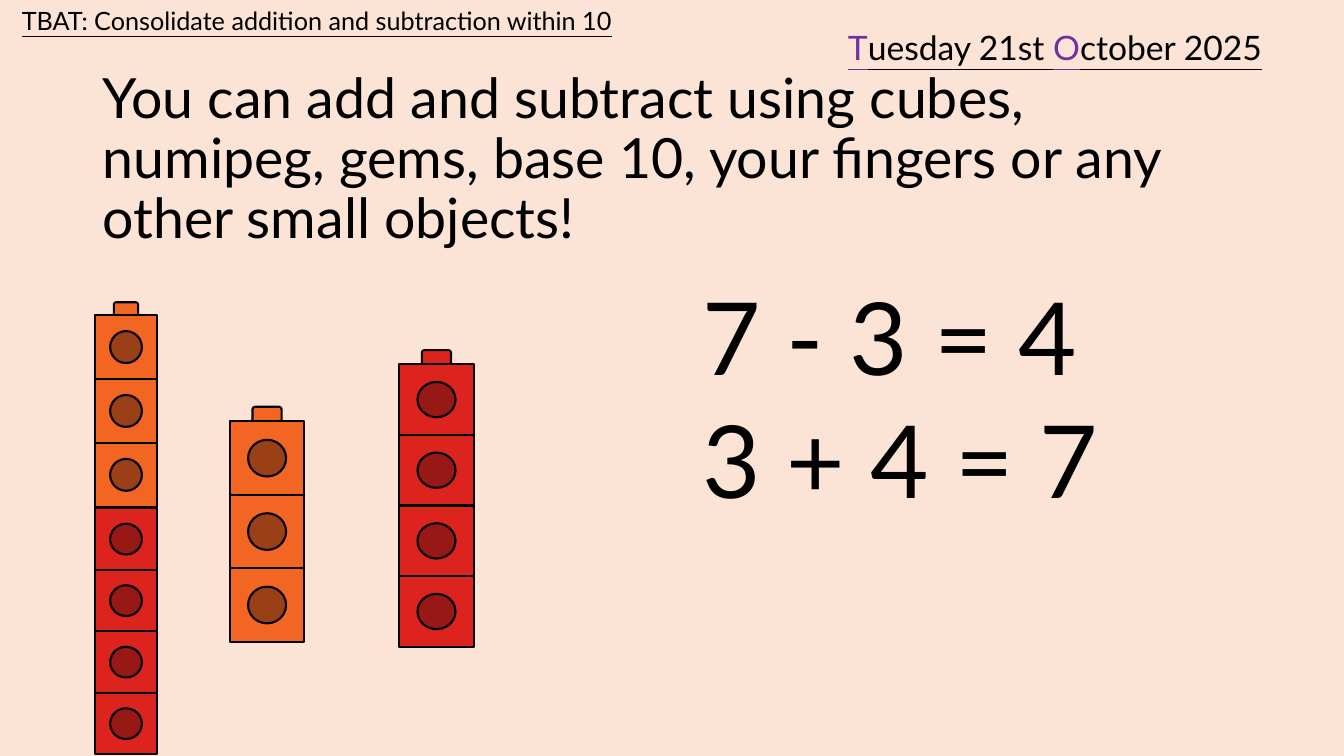
from dataclasses import dataclass

from pptx import Presentation
from pptx.dml.color import RGBColor
from pptx.enum.shapes import MSO_SHAPE
from pptx.enum.text import MSO_ANCHOR
from pptx.slide import Slide
from pptx.util import Cm, Pt

STUD = MSO_SHAPE.ROUND_2_SAME_RECTANGLE
BODY = MSO_SHAPE.RECTANGLE
HOLE = MSO_SHAPE.OVAL
TOP = MSO_ANCHOR.TOP
MIDDLE = MSO_ANCHOR.MIDDLE

FONT = "Lato"
COLOURS = {
    "background": "FBE3D6",
    "black": "000000",
    "purple": "7030A0",
    "red": "DC231E",
    "dark red": "971815",
    "orange": "F36523",
    "dark orange": "994016",
}


@dataclass
class Tower:
    """A stack of cubes; lengths in cm, top is the top of the highest cube body."""
    left: float
    top: float
    cube_width: float
    cube_height: float
    count: int
    colour: str


@dataclass
class TextBlock:
    """A text box in cm; each paragraph is a list of (text, colour) runs."""
    left: float
    top: float
    width: float
    height: float
    size: float
    paragraphs: list[list[tuple[str, str]]]
    underline: bool = False
    line_spacing: float = 1.0
    space_before: float = 0
    anchor: MSO_ANCHOR = TOP


TOWERS = [
    Tower(10.06, 9.18, 1.88, 1.78, 4, "red"),
    Tower(5.79, 10.62, 1.88, 1.85, 3, "orange"),
    Tower(2.39, 12.81, 1.57, 1.55, 4, "red"),
    Tower(2.39, 7.94, 1.57, 1.61, 3, "orange"),
]

TEXT_BLOCKS = [
    TextBlock(2.34, 2.21, 29.21, 3.68, 39.6,
              [[("You can add and subtract using cubes, numipeg, gems, base 10, "
                 "your fingers or any other small objects!", "black")]],
              line_spacing=0.9, anchor=MIDDLE),
    TextBlock(17.45, 7.14, 14.02, 6.53, 72,
              [[("7 - 3 = 4", "black")], [("3 + 4 = 7", "black")]],
              line_spacing=0.9, space_before=10),
    TextBlock(0.3, 0, 16.94, 1.02, 18,
              [[("TBAT: Consolidate addition and subtraction within 10", "black")]],
              underline=True),
    TextBlock(21.12, 0.56, 11.91, 1.27, 24,
              [[("T", "purple"), ("uesday 21st ", "black"),
                ("O", "purple"), ("ctober 2025", "black")]],
              underline=True),
]


def colour(name: str) -> RGBColor:
    return RGBColor.from_string(COLOURS[name])


def draw_tower(slide: Slide, tower: Tower) -> None:
    """Stack the cubes from the bottom up, so each body hides the stud below it."""
    group = slide.shapes.add_group_shape()
    width, height = tower.cube_width, tower.cube_height
    # Preset, width, height and top offset as shares of the cube, then fill.
    parts = [
        (STUD, 0.39, 0.22, -0.2, tower.colour),
        (BODY, 1, 1, 0, tower.colour),
        (HOLE, 0.51, 0.5, 0.25, f"dark {tower.colour}"),
    ]
    for row in reversed(range(tower.count)):
        cube_top = tower.top + row * height
        for preset, width_share, height_share, offset, fill in parts:
            shape = group.shapes.add_shape(
                preset,
                Cm(tower.left + width * (1 - width_share) / 2),
                Cm(cube_top + height * offset),
                Cm(width * width_share),
                Cm(height * height_share),
            )
            shape.shadow.inherit = False
            shape.fill.solid()
            shape.fill.fore_color.rgb = colour(fill)
            shape.line.color.rgb = colour("black")
            shape.line.width = Pt(1.5)


def draw_text(slide: Slide, block: TextBlock) -> None:
    box = slide.shapes.add_textbox(
        Cm(block.left), Cm(block.top), Cm(block.width), Cm(block.height))
    frame = box.text_frame
    frame.word_wrap = True
    frame.vertical_anchor = block.anchor
    for index, runs in enumerate(block.paragraphs):
        paragraph = frame.add_paragraph() if index else frame.paragraphs[0]
        paragraph.line_spacing = block.line_spacing
        paragraph.space_before = Pt(block.space_before)
        for text, colour_name in runs:
            run = paragraph.add_run()
            run.text = text
            run.font.name = FONT
            run.font.size = Pt(block.size)
            run.font.underline = block.underline
            run.font.color.rgb = colour(colour_name)


def main() -> None:
    presentation = Presentation()
    presentation.slide_width = Cm(33.87)
    presentation.slide_height = Cm(19.05)
    slide = presentation.slides.add_slide(presentation.slide_layouts[6])
    slide.background.fill.solid()
    slide.background.fill.fore_color.rgb = colour("background")
    for tower in TOWERS:
        draw_tower(slide, tower)
    for block in TEXT_BLOCKS:
        draw_text(slide, block)
    presentation.save("out.pptx")


if __name__ == "__main__":
    main()
